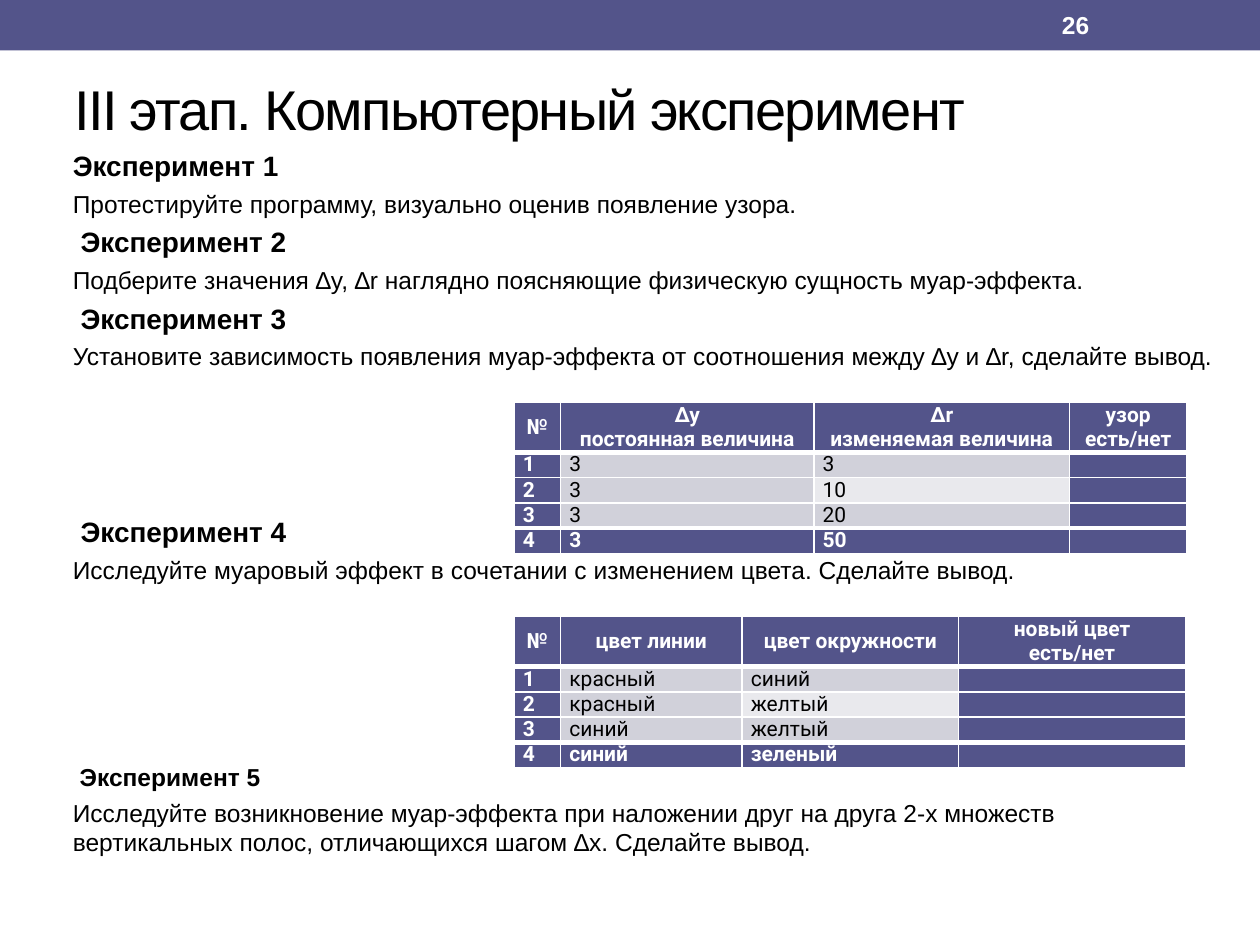
import dataclasses

import pptx
import pptx.dml.color
import pptx.enum.shapes
import pptx.enum.text
import pptx.oxml
import pptx.oxml.ns
import pptx.util

Inches = pptx.util.Inches
Pt = pptx.util.Pt
ANCHOR = pptx.enum.text.MSO_ANCHOR
ALIGN = pptx.enum.text.PP_ALIGN

ACCENT, BAND_DARK, BAND_LIGHT = "53548A", "D1D1DA", "E9E9ED"
WHITE, BLACK = "FFFFFF", "000000"
BODY_GAP = 3.8


@dataclasses.dataclass(frozen=True)
class Experiment:
    heading: str
    task: tuple[str, ...]
    space_before: float = BODY_GAP
    heading_size: float = 16


@dataclasses.dataclass(frozen=True)
class ResultTable:
    top: float
    widths: tuple[float, ...]
    headers: tuple[str, ...]
    values: tuple[tuple[str, str], ...]


EXPERIMENTS = (
    Experiment("Эксперимент 1",
               ("Протестируйте программу, визуально оценив появление узора.",), 0),
    Experiment(" Эксперимент 2",
               ("Подберите значения ∆y, ∆r наглядно поясняющие физическую сущность муар-эффекта.",)),
    Experiment(" Эксперимент 3",
               ("Установите зависимость появления муар-эффекта от соотношения между ∆y и ∆r, сделайте вывод.",)),
    Experiment(" Эксперимент 4",
               ("Исследуйте муаровый эффект в сочетании с изменением цвета. Сделайте вывод.",), 82),
    Experiment(" Эксперимент 5",
               ("Исследуйте возникновение муар-эффекта при наложении друг на друга 2-х множеств ",
                "вертикальных полос, отличающихся шагом ∆x. Сделайте вывод."), 101.5, 14),
)

TABLES = (
    ResultTable(3.19, (0.37, 2.01, 2.03, 0.93),
                ("№", "∆y\nпостоянная величина", "∆r\nизменяемая величина", "узор\nесть/нет"),
                (("3", "3"), ("3", "10"), ("3", "20"), ("3", "50"))),
    ResultTable(4.89, (0.37, 1.44, 1.72, 1.8),
                ("№", "цвет линии", "цвет окружности", "новый цвет\nесть/нет"),
                (("красный", "синий"), ("красный", "желтый"),
                 ("синий", "желтый"), ("синий", "зеленый"))),
)


def color(value: str) -> pptx.dml.color.RGBColor:
    return pptx.dml.color.RGBColor.from_string(value)


def add_span(para, text: str, size: float, ink: str = BLACK,
             bold: bool = False, face: str = "Arial"):
    span = para.add_run()
    span.text = text
    span.font.size = Pt(size)
    span.font.name = face
    span.font.bold = bold
    span.font.color.rgb = color(ink)
    return span


def add_text_box(page, left: float, top: float, width: float, height: float):
    box = page.shapes.add_textbox(Inches(left), Inches(top), Inches(width), Inches(height))
    box.text_frame.word_wrap = True
    return box.text_frame


def add_header_band(page) -> None:
    band = page.shapes.add_shape(pptx.enum.shapes.MSO_SHAPE.RECTANGLE,
                                 0, 0, Inches(10), Inches(0.4))
    band.shadow.inherit = False
    band.fill.solid()
    band.fill.fore_color.rgb = color(ACCENT)
    band.line.fill.background()
    frame = add_text_box(page, 8.33, 0.02, 1.17, 0.36)
    frame.vertical_anchor = ANCHOR.MIDDLE
    add_span(frame.paragraphs[0], "26", 14, WHITE, True)


def format_title(page) -> None:
    title = page.shapes.title
    title.left, title.top = Inches(0.49), Inches(0.32)
    title.width, title.height = Inches(9), Inches(1.08)
    frame = title.text_frame
    frame.auto_size = pptx.enum.text.MSO_AUTO_SIZE.NONE
    frame.vertical_anchor = ANCHOR.MIDDLE
    para = frame.paragraphs[0]
    para.alignment = ALIGN.LEFT
    span = add_span(para, "III этап. Компьютерный эксперимент", 32)
    span.font._element.set("spc", "-100")


def add_experiments(page, experiments: tuple[Experiment, ...]) -> None:
    frame = add_text_box(page, 0.48, 1.13, 9.3, 5.33)
    for index, experiment in enumerate(experiments):
        para = frame.add_paragraph() if index else frame.paragraphs[0]
        para.space_before = Pt(experiment.space_before)
        add_span(para, experiment.heading, experiment.heading_size, bold=True)
        para = frame.add_paragraph()
        para.space_before = Pt(BODY_GAP)
        for number, line in enumerate(experiment.task):
            if number:
                para.add_line_break()
            add_span(para, line, 14)


def set_borders(cell, top: float, bottom: float) -> None:
    properties = cell._tc.get_or_add_tcPr()
    widths = {"lnL": 1, "lnR": 1, "lnT": top, "lnB": bottom}
    for position, (tag, width) in enumerate(widths.items()):
        properties.insert(position, pptx.oxml.parse_xml(
            f'<a:{tag} {pptx.oxml.ns.nsdecls("a")} w="{Pt(width)}">'
            f'<a:solidFill><a:srgbClr val="{WHITE}"/></a:solidFill></a:{tag}>'))


def fill_cell(cell, text: str, fill: str, header: bool) -> None:
    cell.margin_left = cell.margin_right = Inches(0.07)
    cell.margin_top = cell.margin_bottom = 0
    cell.vertical_anchor = ANCHOR.MIDDLE if header else ANCHOR.TOP
    cell.fill.solid()
    cell.fill.fore_color.rgb = color(fill)
    strong = fill == ACCENT
    frame = cell.text_frame
    for index, line in enumerate(text.split("\n")):
        para = frame.add_paragraph() if index else frame.paragraphs[0]
        para.alignment = ALIGN.CENTER if header else ALIGN.LEFT
        if line:
            add_span(para, line, 12, WHITE if strong else BLACK, strong, "Roboto")
        else:
            para._p.append(pptx.oxml.parse_xml(
                f'<a:endParaRPr {pptx.oxml.ns.nsdecls("a")} sz="1200">'
                '<a:latin typeface="Roboto"/></a:endParaRPr>'))


def cell_fill(row: int, column: int, last_row: int) -> str:
    if row in (0, last_row) or column in (0, 3):
        return ACCENT
    return BAND_LIGHT if (row, column) == (2, 2) else BAND_DARK


def add_result_table(page, result: ResultTable) -> None:
    rows = [result.headers] + [(str(number), *pair, "")
                               for number, pair in enumerate(result.values, 1)]
    last = len(rows) - 1
    table = page.shapes.add_table(len(rows), len(result.widths), Inches(4.08),
                                  Inches(result.top), Inches(sum(result.widths)),
                                  Inches(1.2)).table
    for column, width in zip(table.columns, result.widths):
        column.width = Inches(width)
    for row, texts in enumerate(rows):
        table.rows[row].height = Inches(0.19 if row else 0.39)
        for column, text in enumerate(texts):
            cell = table.cell(row, column)
            fill_cell(cell, text, cell_fill(row, column, last), row == 0)
            set_borders(cell, 3 if row in (1, last) else 1,
                        3 if row in (0, last - 1) else 1)


def main() -> None:
    deck = pptx.Presentation()
    deck.slide_width, deck.slide_height = Inches(10), Inches(7.5)
    page = deck.slides.add_slide(deck.slide_layouts[5])
    add_header_band(page)
    format_title(page)
    add_experiments(page, EXPERIMENTS)
    for result in TABLES:
        add_result_table(page, result)
    deck.save("out.pptx")


if __name__ == "__main__":
    main()
